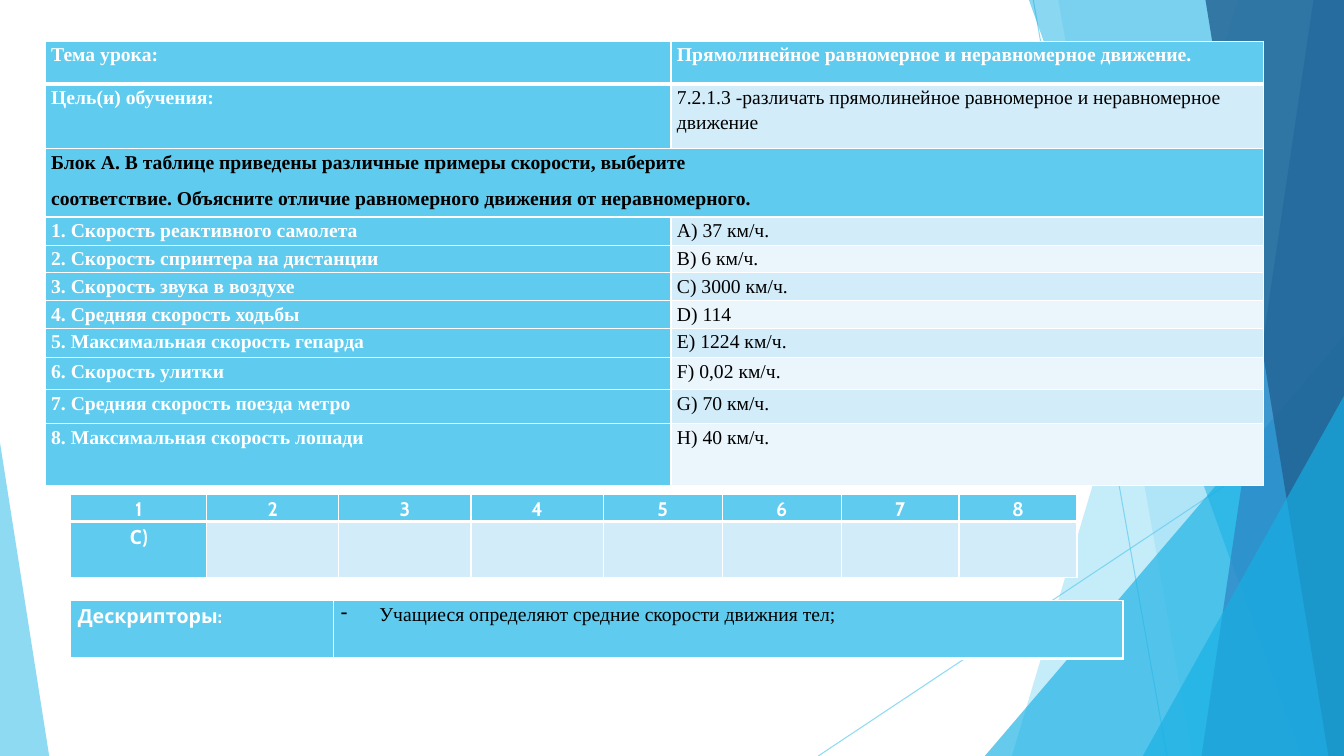
from lxml.etree import SubElement
from pptx import Presentation
from pptx.dml.color import RGBColor
from pptx.enum.shapes import MSO_CONNECTOR, MSO_SHAPE
from pptx.enum.text import PP_ALIGN
from pptx.oxml.ns import qn
from pptx.util import Cm, Pt

COLORS = {
    "accent": "5FCBEF", "azure": "17B0E4", "blue": "2E83C3", "navy": "226292",
    "band": "D2ECF9", "pale": "EAF6FC", "white": "FFFFFF", "black": "000000",
}
SERIF, SANS = "Times New Roman", "Cabin"
PAGE_WIDTH, PAGE_HEIGHT = 33.87, 19.05

LESSON_ROWS = [
    (1.07, "Тема урока:", "Прямолинейное равномерное и неравномерное движение."),
    (1.63, "Цель(и) обучения:",
     "7.2.1.3 -различать прямолинейное равномерное и неравномерное движение"),
    (1.73, "Блок А. В таблице приведены различные примеры скорости, выберите\n"
           "соответствие. Объясните отличие равномерного движения от неравномерного.", ""),
    (0.71, "1. Скорость реактивного самолета", "А) 37 км/ч."),
    (0.69, "2. Скорость спринтера на дистанции", "В) 6 км/ч."),
    (0.71, "3. Скорость звука в воздухе", "С) 3000 км/ч."),
    (0.69, "4. Средняя скорость ходьбы", "D) 114"),
    (0.74, "5. Максимальная скорость гепарда", "E) 1224 км/ч."),
    (0.81, "6. Скорость улитки", "F) 0,02 км/ч."),
    (0.86, "7. Средняя скорость поезда метро", "G) 70 км/ч."),
    (1.55, "8. Максимальная скорость лошади", "H) 40 км/ч."),
]
BLOCK_ROW = 2


def rgb(name):
    return RGBColor.from_string(COLORS[name])


def set_opacity(shape, percent):
    for color in shape._element.spPr.iter(qn("a:srgbClr")):
        SubElement(color, qn("a:alpha"), val=str(percent * 1000))


def paint(shape, color, opacity):
    shape.shadow.inherit = False
    shape.fill.solid()
    shape.fill.fore_color.rgb = rgb(color)
    shape.line.fill.background()
    set_opacity(shape, opacity)


def add_ray(page, start, end):
    ray = page.shapes.add_connector(
        MSO_CONNECTOR.STRAIGHT, *(Cm(value) for value in (*start, *end)))
    ray.line.color.rgb = rgb("accent")
    ray.line.width = Pt(0.75)
    set_opacity(ray, 70)
    SubElement(ray._element.spPr, qn("a:effectLst"))


def add_panel(page, top_left, bottom_left, color, opacity):
    """Fill the page from a slanted left edge to its right side."""
    builder = page.shapes.build_freeform(Cm(top_left), 0)
    builder.add_line_segments([
        (Cm(PAGE_WIDTH), 0), (Cm(PAGE_WIDTH), Cm(PAGE_HEIGHT)),
        (Cm(bottom_left), Cm(PAGE_HEIGHT))])
    paint(builder.convert_to_shape(), color, opacity)


def add_corner(page, left, top, width, apex, color, opacity):
    """Add a triangle that stands on the bottom of the page."""
    corner = page.shapes.add_shape(
        MSO_SHAPE.ISOSCELES_TRIANGLE,
        Cm(left), Cm(top), Cm(width), Cm(PAGE_HEIGHT - top))
    corner.adjustments[0] = apex
    paint(corner, color, opacity)


def add_backdrop(page):
    add_ray(page, (26.04, 0), (29.41, PAGE_HEIGHT))
    add_ray(page, (PAGE_WIDTH, 10.24), (20.62, PAGE_HEIGHT))
    add_panel(page, 31.19, 25.5, "accent", 36)
    add_panel(page, 26.67, 30.05, "accent", 20)
    add_corner(page, 24.82, 8.46, 9.05, 1, "azure", 66)
    add_panel(page, 25.93, 32.79, "azure", 50)
    add_panel(page, 33.1, 30.28, "blue", 70)
    add_panel(page, 30.38, 33.48, "navy", 80)
    add_corner(page, 28.8, 9.98, 5.07, 1, "azure", 66)
    add_corner(page, 0, 11.15, 1.24, 0, "accent", 70)


def add_grid(page, left, top, widths, heights):
    frame = page.shapes.add_table(
        len(heights), len(widths),
        Cm(left), Cm(top), Cm(sum(widths)), Cm(sum(heights)))
    table = frame.table
    table.horz_banding = False
    for column, width in zip(table.columns, widths):
        column.width = Cm(width)
    for row, height in zip(table.rows, heights):
        row.height = Cm(height)
    return table


def style_cell(cell, row, fill, side_margin):
    """Set margins, fill and white borders, thick under the first row."""
    cell.margin_left = cell.margin_right = Cm(side_margin)
    cell.margin_top = cell.margin_bottom = 0
    properties = cell._tc.get_or_add_tcPr()
    thick = {0: "lnB", 1: "lnT"}.get(row)
    for side in ("lnL", "lnR", "lnT", "lnB"):
        width = Pt(3 if side == thick else 1)
        border = SubElement(properties, qn(f"a:{side}"), w=str(width))
        solid = SubElement(border, qn("a:solidFill"))
        SubElement(solid, qn("a:srgbClr"), val=COLORS["white"])
    cell.fill.solid()
    cell.fill.fore_color.rgb = rgb(fill)


def write(cell, text, font_name, color="white", bold=True, align=PP_ALIGN.LEFT):
    cell.text = text
    for para in cell.text_frame.paragraphs:
        para.alignment = align
        para.line_spacing = 1.15
        para.space_after = Pt(8)
        para.font.name = font_name
        para.font.size = Pt(14)
        para.font.bold = bold
        para.font.color.rgb = rgb(color)


def add_dash(para, indent):
    properties = para._p.get_or_add_pPr()
    properties.set("marL", str(Cm(indent)))
    properties.set("indent", str(-Cm(indent)))
    dash = properties.makeelement(qn("a:buChar"), {"char": "-"})
    properties.find(qn("a:defRPr")).addprevious(dash)


def add_lesson_table(page, left, top):
    heights = [height for height, _, _ in LESSON_ROWS]
    table = add_grid(page, left, top, [15.77, 14.94], heights)
    for row, (_, label, value) in enumerate(LESSON_ROWS):
        plain = row not in (0, BLOCK_ROW)
        band = "band" if row % 2 else "pale"
        label_cell, value_cell = table.cell(row, 0), table.cell(row, 1)
        style_cell(label_cell, row, "accent", 0.15)
        style_cell(value_cell, row, band if plain else "accent", 0.15)
        if row == BLOCK_ROW:
            label_cell.merge(value_cell)
            write(label_cell, label, SERIF, "black", align=PP_ALIGN.JUSTIFY)
        else:
            write(label_cell, label, SERIF)
            write(value_cell, value, SERIF, "black" if plain else "white", not plain)


def add_answer_table(page, left, top):
    widths = [3.43] + [3.33] * 3 + [3] * 2 + [2.97] * 2
    table = add_grid(page, left, top, widths, [0.66, 1.42])
    for column in range(len(widths)):
        number, answer = table.cell(0, column), table.cell(1, column)
        style_cell(number, 0, "accent", 0.18)
        write(number, str(column + 1), SANS, align=PP_ALIGN.CENTER)
        style_cell(answer, 1, "band" if column else "accent", 0.18)
    write(table.cell(1, 0), "С)", SANS, align=PP_ALIGN.CENTER)


def add_descriptor_table(page, left, top):
    table = add_grid(page, left, top, [6.63, 19.89], [1.45])
    label, task = table.cell(0, 0), table.cell(0, 1)
    for cell in (label, task):
        style_cell(cell, 0, "accent", 0.18)
    write(label, "Дескрипторы:", SANS)
    write(task, "Учащиеся определяют средние скорости движния тел;", SERIF, "black", False)
    add_dash(task.text_frame.paragraphs[0], 0.97)


def main():
    deck = Presentation()
    deck.slide_width, deck.slide_height = Cm(PAGE_WIDTH), Cm(PAGE_HEIGHT)
    page = deck.slides.add_slide(deck.slide_layouts[6])
    add_backdrop(page)
    add_lesson_table(page, 1.14, 1.04)
    add_answer_table(page, 1.78, 12.45)
    add_descriptor_table(page, 1.78, 15.14)
    deck.save("out.pptx")


if __name__ == "__main__":
    main()
